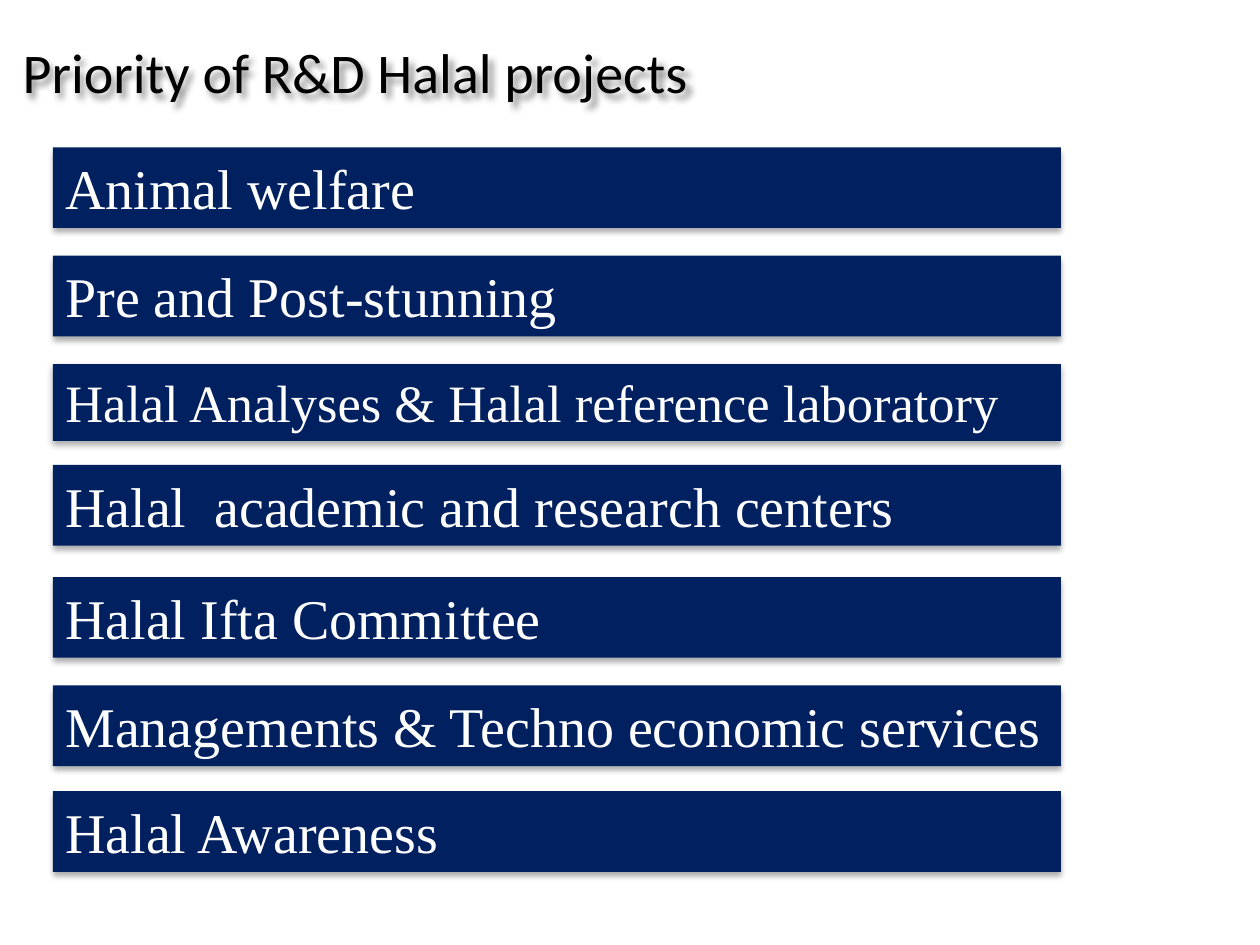
import pptx
import pptx.util
import pptx.dml.color
import pptx.enum.shapes
import pptx.enum.text
import pptx.oxml

COLORS = {"title": "000000", "bar": "002060", "label": "FFFFFF", "shadow": "000000"}
TITLE = "Priority of R&D Halal projects"
BARS = [
    ("Animal welfare", 1.17, 32),
    ("Pre and Post-stunning", 2.03, 32),
    ("Halal Analyses & Halal reference laboratory", 2.89, 30),
    ("Halal  academic and research centers", 3.69, 32),
    ("Halal Ifta Committee", 4.58, 32),
    ("Managements & Techno economic services", 5.44, 32),
    ("Halal Awareness", 6.28, 32),
]
LEFT, WIDTH = 0.42, 8
BAR_SHADOW = {"blur": 3.5, "dist": 2.2, "angle": 90, "alpha": 32}
TITLE_SHADOW = {"blur": 4, "dist": 3, "angle": 45, "alpha": 43}
FRAME = {
    "word_wrap": True,
    "auto_size": pptx.enum.text.MSO_AUTO_SIZE.SHAPE_TO_FIT_TEXT,
    "vertical_anchor": pptx.enum.text.MSO_ANCHOR.TOP,
    "margin_left": pptx.util.Inches(0.1),
    "margin_right": pptx.util.Inches(0.1),
    "margin_top": pptx.util.Inches(0.05),
    "margin_bottom": pptx.util.Inches(0.05),
}


def rgb(name):
    return pptx.dml.color.RGBColor.from_string(COLORS[name])


def box(left, top, width, height):
    return [pptx.util.Inches(v) for v in (left, top, width, height)]


def write(sp, text, font, size, color):
    tf = sp.text_frame
    for name, value in FRAME.items():
        setattr(tf, name, value)
    p = tf.paragraphs[0]
    p.alignment = pptx.enum.text.PP_ALIGN.JUSTIFY
    r = p.add_run()
    r.text = text
    for name, value in {"name": font, "size": pptx.util.Pt(size), "bold": False}.items():
        setattr(r.font, name, value)
    r.font.color.rgb = rgb(color)


def cast_shadow(sp, blur, dist, angle, alpha):
    sp.shadow.inherit = False
    effects = sp._element.spPr.find(pptx.oxml.ns.qn("a:effectLst"))
    effects.append(pptx.oxml.parse_xml(
        f'<a:outerShdw {pptx.oxml.ns.nsdecls("a")} blurRad="{pptx.util.Pt(blur)}" '
        f'dist="{pptx.util.Pt(dist)}" dir="{angle * 60000}" algn="tl" rotWithShape="0">'
        f'<a:srgbClr val="{COLORS["shadow"]}"><a:alpha val="{alpha * 1000}"/></a:srgbClr>'
        '</a:outerShdw>'))


def main():
    prs = pptx.Presentation()
    prs.slide_width, prs.slide_height = pptx.util.Inches(10), pptx.util.Inches(7.5)
    s = prs.slides.add_slide(prs.slide_layouts[5])

    title = s.shapes.title
    title.left, title.top, title.width, title.height = box(0.08, 0.25, 8.75, 0.64)
    title.fill.background()
    write(title, TITLE, "Calibri", 32, "title")
    cast_shadow(title, **TITLE_SHADOW)

    for text, top, size in BARS:
        height = 0.64 if size == 32 else 0.61
        bar = s.shapes.add_shape(pptx.enum.shapes.MSO_SHAPE.RECTANGLE,
                                 *box(LEFT, top, WIDTH, height))
        bar.fill.solid()
        bar.fill.fore_color.rgb = rgb("bar")
        bar.line.fill.background()
        write(bar, text, "Times New Roman", size, "label")
        cast_shadow(bar, **BAR_SHADOW)

    prs.save("out.pptx")


if __name__ == "__main__":
    main()
